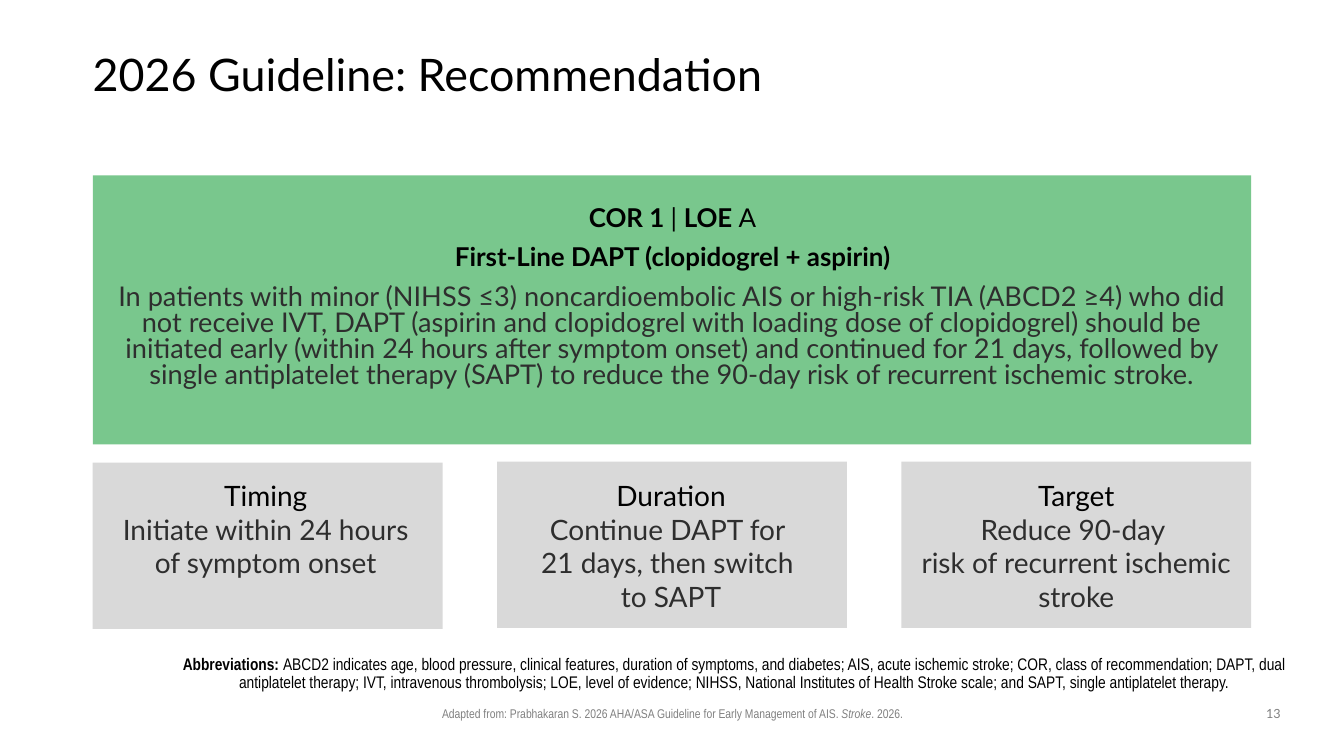
from pptx import Presentation
from pptx import util as u
from pptx.dml.color import RGBColor
from pptx.enum import shapes, text

BLACK = RGBColor(0x00, 0x00, 0x00)
CHARCOAL = RGBColor(0x2E, 0x2E, 0x2E)
GRAY = RGBColor(0x80, 0x80, 0x80)
GREEN = RGBColor(0x79, 0xC7, 0x8D)
LIGHT_GRAY = RGBColor(0xD9, 0xD9, 0xD9)

EMU_PER_PX = 9144  # 100 px to the inch


def px(length):
    return u.Emu(length * EMU_PER_PX)


class SlideBuilder:
    font = "Lato"
    narrow_font = "Arial Narrow"

    def __init__(self, presentation):
        self.slide = presentation.slides.add_slide(presentation.slide_layouts[6])

    def panel(self, left, top, width, height, fill):
        shape = self.slide.shapes.add_shape(
            shapes.MSO_SHAPE.RECTANGLE, px(left), px(top), px(width), px(height))
        shape.shadow.inherit = False
        shape.fill.solid()
        shape.fill.fore_color.rgb = fill
        shape.line.fill.background()

    def text_box(self, left, top, width, height, paragraphs, size, color=BLACK,
                 font=None, align=text.PP_ALIGN.CENTER,
                 anchor=text.MSO_ANCHOR.TOP, spacing=1.0, before=0,
                 insets=(10, 5, 10, 5)):
        """Each paragraph is a list of (wording, style) runs."""
        box = self.slide.shapes.add_textbox(px(left), px(top), px(width), px(height))
        frame = box.text_frame
        frame.word_wrap = True
        frame.vertical_anchor = anchor
        (frame.margin_left, frame.margin_top,
         frame.margin_right, frame.margin_bottom) = map(px, insets)
        for index, runs in enumerate(paragraphs):
            paragraph = frame.add_paragraph() if index else frame.paragraphs[0]
            paragraph.alignment = align
            paragraph.line_spacing = spacing
            paragraph.space_before = u.Pt(before if index else 0)
            for wording, style in runs:
                self.run(paragraph, wording, {
                    "size": size, "color": color, "font": font or self.font, **style})

    def run(self, paragraph, wording, style):
        for index, line in enumerate(wording.split("\n")):
            if index:
                paragraph.add_line_break()
            run = paragraph.add_run()
            run.text = line
            run.font.name = style["font"]
            run.font.size = u.Pt(style["size"])
            run.font.color.rgb = style["color"]
            run.font.bold = style.get("bold", False)
            run.font.italic = style.get("italic", False)


def main():
    presentation = Presentation()
    presentation.slide_width = px(1333)
    presentation.slide_height = px(750)
    builder = SlideBuilder(presentation)
    bold = {"bold": True}
    body = {"color": CHARCOAL}

    # Title
    builder.text_box(92, 40, 1150, 72, [[("2026 Guideline: Recommendation", {})]], 32,
                     align=text.PP_ALIGN.LEFT, anchor=text.MSO_ANCHOR.MIDDLE,
                     spacing=0.9, insets=(0, 0, 0, 0))

    # Recommendation
    builder.panel(92, 174, 1149, 267, GREEN)
    builder.text_box(92, 201, 1150, 227, [
        [("COR 1 ", bold), ("| ", {}), ("LOE ", bold), ("A", {})],
        [("First-Line DAPT (clopidogrel + aspirin)", bold)],
        [("In patients with minor (NIHSS ≤3) noncardioembolic AIS or high-risk TIA "
          "(ABCD2 ≥4) who did not receive IVT, DAPT (aspirin and clopidogrel with "
          "loading dose of clopidogrel) should be initiated early (within 24 hours "
          "after symptom onset) and continued for 21 days, followed by single "
          "antiplatelet therapy (SAPT) to reduce the 90-day risk of recurrent "
          "ischemic stroke.", {**body, "size": 19.4})],
    ], 18.5, spacing=0.8, before=10)

    # Key points: heading, detail, panel top, text left, text width
    key_points = [
        ("Timing", "Initiate within 24 hours of symptom onset", 459, 99, 329),
        ("Duration", "Continue DAPT for \n21 days, then switch \nto SAPT", 458, 501, 329),
        ("Target", "Reduce 90-day \nrisk of recurrent ischemic stroke", 458, 897, 341),
    ]
    for column, (heading, detail, top, left, width) in enumerate(key_points):
        builder.panel(92 + 401 * column, top, 347, 165, LIGHT_GRAY)
        builder.text_box(left, 470, width, 145, [[(heading, {})], [(detail, body)]], 20)

    # Abbreviations
    builder.text_box(159, 642, 1149, 50, [[
        ("Abbreviations: ", bold),
        ("ABCD2 indicates age, blood pressure, clinical features, duration of symptoms, "
         "and diabetes; AIS, acute ischemic stroke; COR, class of recommendation; DAPT, "
         "dual antiplatelet therapy; IVT, intravenous thrombolysis; LOE, level of "
         "evidence; NIHSS, National Institutes of Health Stroke scale; and SAPT, single "
         "antiplatelet therapy.", {}),
    ]], 12, font=builder.narrow_font, anchor=text.MSO_ANCHOR.BOTTOM, spacing=0.9,
        insets=(0, 5, 10, 5))

    # Source and slide number
    builder.text_box(236, 695, 862, 25, [[
        ("Adapted from: Prabhakaran S. 2026 AHA/ASA Guideline for Early Management "
         "of AIS. ", {}),
        ("Stroke", {"italic": True}),
        (". 2026.", {}),
    ]], 9, GRAY, builder.narrow_font)
    builder.text_box(1242, 695, 42, 26, [[("13", {})]], 9, GRAY)

    presentation.save("out.pptx")


if __name__ == "__main__":
    main()
